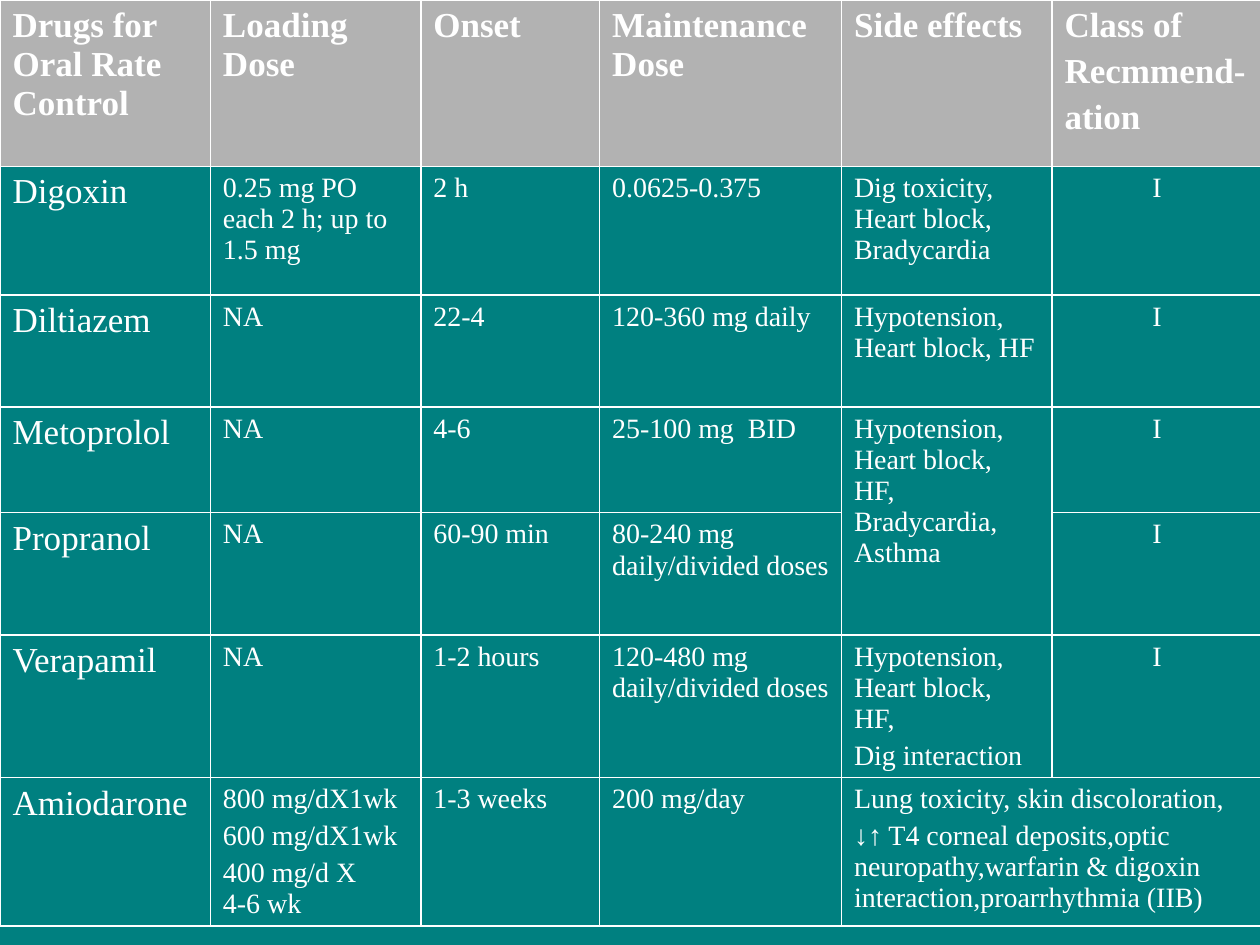
from lxml import etree
from pptx import Presentation
from pptx import util as u
from pptx.dml.color import RGBColor
from pptx.enum import text
from pptx.oxml.ns import qn

TEAL = RGBColor(0x00, 0x80, 0x80)
GREY = RGBColor(0xB2, 0xB2, 0xB2)
WHITE = RGBColor(0xFF, 0xFF, 0xFF)
FONT = "Times New Roman"

# Content: a new line starts a paragraph, \v breaks a line
HEAD = ["Drugs for Oral Rate Control", "Loading Dose", "Onset",
        "Maintenance Dose", "Side effects", "Class of\nRecmmend-\nation"]
DRUGS = [
    ["Digoxin", "0.25 mg PO each 2 h; up to 1.5 mg", "2 h", "0.0625-0.375",
     "Dig toxicity, Heart block, Bradycardia", "I"],
    ["Diltiazem", "NA", "22-4", "120-360 mg daily",
     "Hypotension, Heart block, HF", "I"],
    ["Metoprolol", "NA", "4-6", "25-100 mg  BID",
     "Hypotension, Heart block, HF, Bradycardia, Asthma", "I"],
    ["Propranol", "NA", "60-90 min", "80-240 mg daily/divided doses", "", "I"],
    ["Verapamil", "NA", "1-2 hours", "120-480 mg daily/divided doses",
     "Hypotension, Heart block, HF,\nDig interaction", "I"],
    ["Amiodarone", "800 mg/dX1wk\n600 mg/dX1wk\n400 mg/d X\v4-6 wk",
     "1-3 weeks", "200 mg/day",
     "Lung toxicity, skin discoloration,\n↓↑ T4 corneal deposits,optic "
     "neuropathy,warfarin & digoxin interaction,proarrhythmia (IIB)", ""],
]
ROWS = [HEAD] + DRUGS
WIDE = [1.67, 1.67, 1.42, 1.92, 1.67, 1.67]
HIGH = [1.32, 1.02, 0.89, 0.84, 0.97, 0.98, 1.15]
SPANS = [((3, 4), (4, 4)), ((6, 4), (6, 5))]


def border(cell):
    """Draw a white line on all four sides of a cell."""
    props = cell._tc.get_or_add_tcPr()
    for i, side in enumerate(("a:lnL", "a:lnR", "a:lnT", "a:lnB")):
        line = etree.Element(qn(side), w=str(u.Pt(1)))
        fill = etree.SubElement(line, qn("a:solidFill"))
        etree.SubElement(fill, qn("a:srgbClr"), val=str(WHITE))
        props.insert(i, line)


def write(cell, words, size, bold, align):
    cell.text_frame.text = words
    for i, para in enumerate(cell.text_frame.paragraphs):
        para.alignment = align
        if i:
            para.space_before = u.Pt(size * 0.2)
        for run in para.runs:
            font = run.font
            font.name, font.size, font.bold = FONT, u.Pt(size), bold
            font.color.rgb = WHITE


# Slide
deck = Presentation()
deck.slide_width, deck.slide_height = u.Inches(10), u.Inches(7.5)
slide = deck.slides.add_slide(deck.slide_layouts[6])
slide.background.fill.solid()
slide.background.fill.fore_color.rgb = TEAL

# Table grid
table = slide.shapes.add_table(
    len(ROWS), len(HEAD), 0, 0, u.Inches(10), u.Inches(sum(HIGH))).table
table.horz_banding = False
for col, width in zip(table.columns, WIDE):
    col.width = u.Inches(width)
for row, height in zip(table.rows, HIGH):
    row.height = u.Inches(height)
for first, last in SPANS:
    table.cell(*first).merge(table.cell(*last))

# Cells
for r, row in enumerate(ROWS):
    for c, words in enumerate(row):
        cell = table.cell(r, c)
        top = r == 0
        if top:
            cell.fill.solid()
            cell.fill.fore_color.rgb = GREY
        else:
            cell.fill.background()
        border(cell)
        if not cell.is_spanned:
            mid = words == "I"
            align = text.PP_ALIGN.CENTER if mid else text.PP_ALIGN.LEFT
            write(cell, words, 20 if top or c == 0 else 16, top, align)

deck.save("out.pptx")
